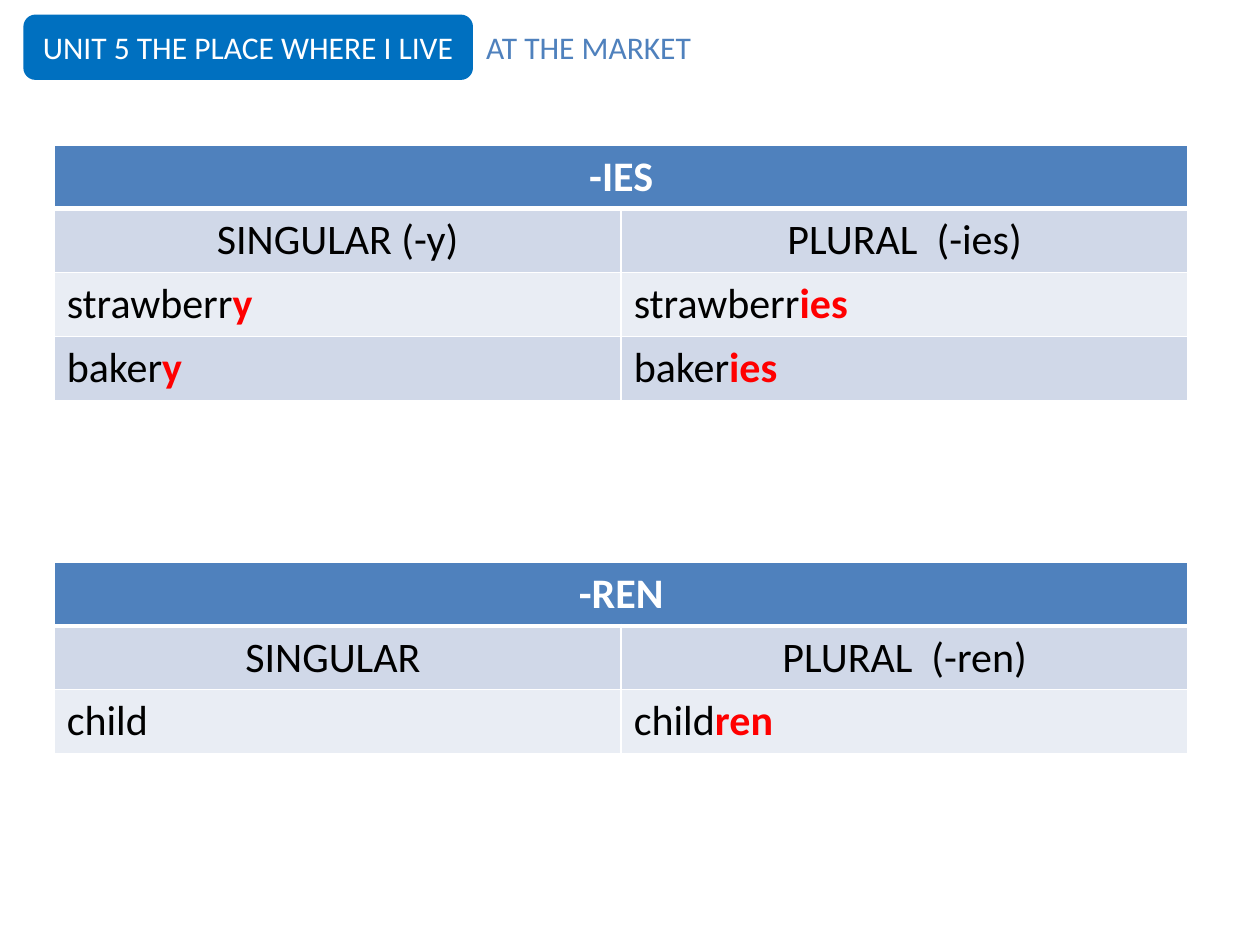
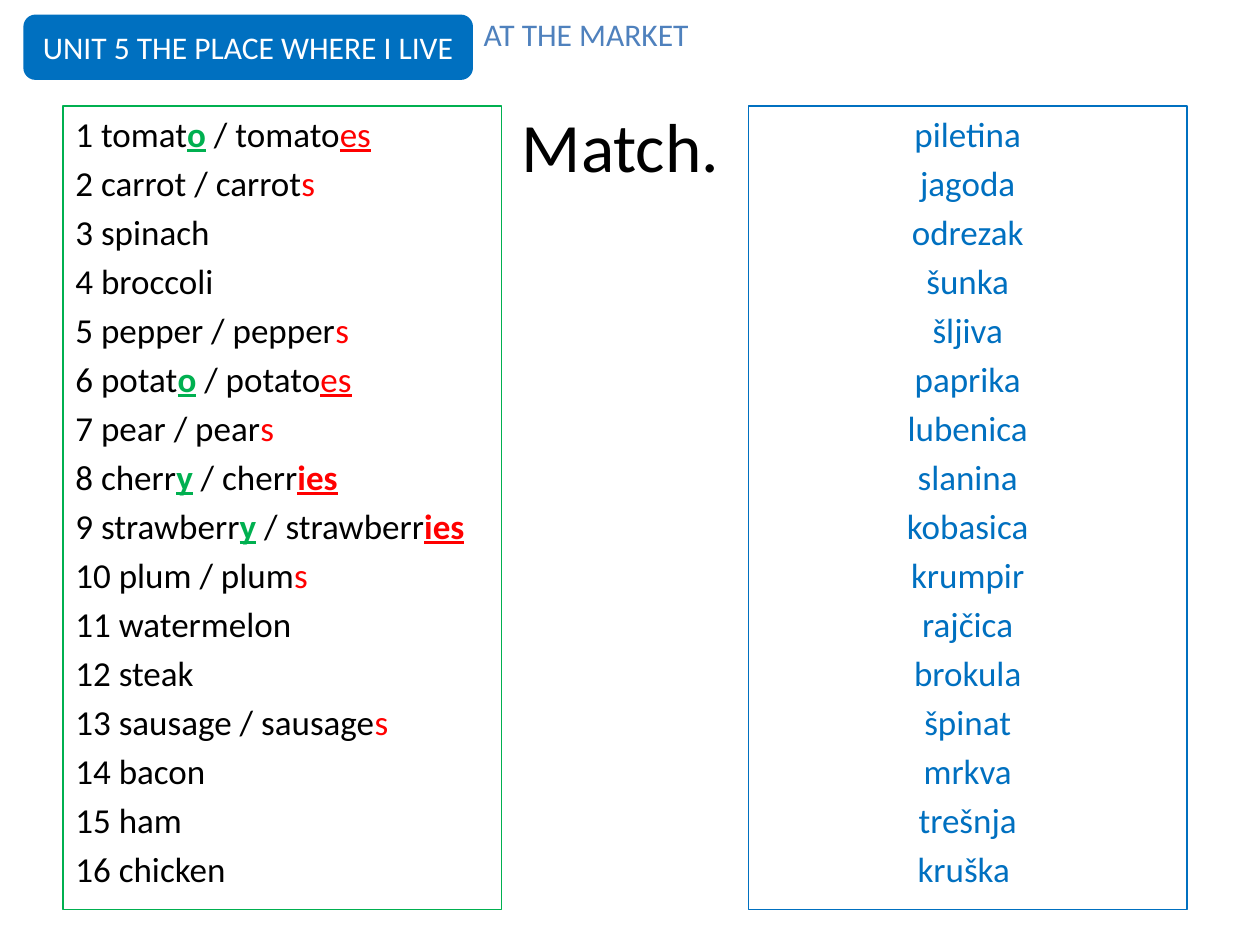
from lxml import etree
from pptx import Presentation
from pptx import util as u
from pptx.dml.color import RGBColor
from pptx.enum import shapes, text
from pptx.oxml.ns import qn

FONT = "Calibri"
BLACK, WHITE, RED, GREEN = "000000", "FFFFFF", "FF0000", "00B050"
BLUE, HEADER = "0070C0", "4F81BD"
BANDS = ["D0D8E8", "E9EDF4"]

UNIT, TOPIC = "UNIT 5 THE PLACE WHERE I LIVE", "AT THE MARKET"
ENDING = dict(color=RED, bold=True)
PLURAL = dict(color=RED)
PLURAL_LINE = dict(color=RED, underline=True)
PLURAL_BOLD = dict(color=RED, bold=True, underline=True)
STEM = dict(color=GREEN, bold=True, underline=True)

TABLES = [
    (1.15, "-IES", [
        (["SINGULAR (-y)"], ["PLURAL  (-ies)"]),
        (["strawberr", ("y", ENDING)], ["strawberr", ("ies", ENDING)]),
        (["baker", ("y", ENDING)], ["baker", ("ies", ENDING)]),
    ]),
    (4.46, "-REN", [
        (["SINGULAR "], ["PLURAL  (-ren)"]),
        (["child"], ["child", ("ren", ENDING)]),
    ]),
]
WORDS = [
    ["tomat", ("o", STEM), " / tomato", ("es", PLURAL_LINE)],
    ["carrot / carrot", ("s", PLURAL)],
    ["spinach"],
    ["broccoli"],
    ["pepper / pepper", ("s", PLURAL)],
    ["potat", ("o", STEM), " / potato", ("es", PLURAL_LINE)],
    ["pear / pear", ("s", PLURAL)],
    ["cherr", ("y", STEM), " / cherr", ("ies", PLURAL_BOLD)],
    ["strawberr", ("y", STEM), " / strawberr", ("ies", PLURAL_BOLD)],
    ["plum / plum", ("s", PLURAL)],
    ["watermelon"],
    ["steak"],
    ["sausage / sausage", ("s", PLURAL)],
    ["bacon"],
    ["ham"],
    ["chicken"],
]
TRANSLATIONS = [
    "piletina", "jagoda", "odrezak", "šunka", "šljiva", "paprika", "lubenica", "slanina",
    "kobasica", "krumpir", "rajčica", "brokula", "špinat", "mrkva", "trešnja", "kruška ",
]


def rgb(value):
    return RGBColor.from_string(value)


def write(tf, lines, size=18, color=BLACK, bold=False, center=False, middle=False,
          before=0, hanging=0):
    tf.word_wrap = True
    tf.vertical_anchor = text.MSO_ANCHOR.MIDDLE if middle else text.MSO_ANCHOR.TOP
    for i, runs in enumerate(lines):
        p = tf.add_paragraph() if i else tf.paragraphs[0]
        p.alignment = text.PP_ALIGN.CENTER if center else text.PP_ALIGN.LEFT
        p.space_before = u.Pt(before)
        if hanging:
            pPr = p._p.get_or_add_pPr()
            pPr.set("marL", str(u.Inches(hanging)))
            pPr.set("indent", str(-u.Inches(hanging)))
        for run in runs:
            words, style = (run, {}) if isinstance(run, str) else run
            r = p.add_run()
            r.text = words
            r.font.name, r.font.size = FONT, u.Pt(size)
            r.font.bold = style.get("bold", bold)
            r.font.underline = style.get("underline", False)
            r.font.color.rgb = rgb(style.get("color", color))


def add_text(s, box, words, **fmt):
    sp = s.shapes.add_textbox(*map(u.Inches, box))
    write(sp.text_frame, [[words]], middle=True, **fmt)


def add_box(s, kind, box, lines, line, weight, fill=None, **fmt):
    sp = s.shapes.add_shape(kind, *map(u.Inches, box))
    sp.shadow.inherit = False
    if fill:
        sp.fill.solid()
        sp.fill.fore_color.rgb = rgb(fill)
    else:
        sp.fill.background()
    sp.line.color.rgb = rgb(line)
    sp.line.width = u.Pt(weight)
    write(sp.text_frame, lines, **fmt)


def add_heading(s, left, top):
    add_text(s, (left, top, 1.85, 0.49), TOPIC, color=HEADER)
    add_box(s, shapes.MSO_SHAPE.ROUNDED_RECTANGLE, (0.2, 0.13, 3.54, 0.49), [[UNIT]],
            BLUE, 2, fill=BLUE, color=WHITE, center=True, middle=True)


def style_cell(cell, fill, top=1, bottom=1):
    tcPr = cell._tc.get_or_add_tcPr()
    for side, weight in (("L", 1), ("R", 1), ("T", top), ("B", bottom)):
        ln = etree.SubElement(tcPr, qn("a:ln" + side), w=str(u.Pt(weight)))
        solid = etree.SubElement(ln, qn("a:solidFill"))
        etree.SubElement(solid, qn("a:srgbClr"), val=WHITE)
    cell.fill.solid()
    cell.fill.fore_color.rgb = rgb(fill)


def add_plural_table(s, top, title, rows):
    count = len(rows) + 1
    box = map(u.Inches, (0.43, top, 9, 0.5 * count))
    table = s.shapes.add_table(count, 2, *box).table
    table.cell(0, 0).merge(table.cell(0, 1))
    for col in range(2):
        style_cell(table.cell(0, col), HEADER, bottom=3)
    write(table.cell(0, 0).text_frame, [[title]], size=24, color=WHITE, bold=True, center=True)
    for i, row in enumerate(rows):
        for col, runs in enumerate(row):
            cell = table.cell(i + 1, col)
            style_cell(cell, BANDS[i % 2], top=1 if i else 3)
            write(cell.text_frame, [runs], size=24, center=i == 0)


def add_word_list(s, left, lines, line, **fmt):
    add_box(s, shapes.MSO_SHAPE.RECTANGLE, (left, 0.84, 3.48, 6.38), lines, line, 0.75,
            size=20, before=4, hanging=0.38, **fmt)


def main():
    prs = Presentation()
    prs.slide_width, prs.slide_height = u.Inches(10), u.Inches(7.5)
    blank = prs.slide_layouts[6]

    s = prs.slides.add_slide(blank)
    for table in TABLES:
        add_plural_table(s, *table)
    add_heading(s, 3.76, 0.13)

    s = prs.slides.add_slide(blank)
    add_text(s, (0.43, 0.84, 8.99, 0.61), "Match.", size=39.6, center=True)
    numbered = [[f"{n} {first}", *rest] for n, (first, *rest) in enumerate(WORDS, 1)]
    add_word_list(s, 0.5, numbered, GREEN)
    add_word_list(s, 5.94, [[word] for word in TRANSLATIONS], BLUE, color=BLUE, center=True)
    add_heading(s, 3.74, 0.02)

    prs.save("out.pptx")


if __name__ == "__main__":
    main()
